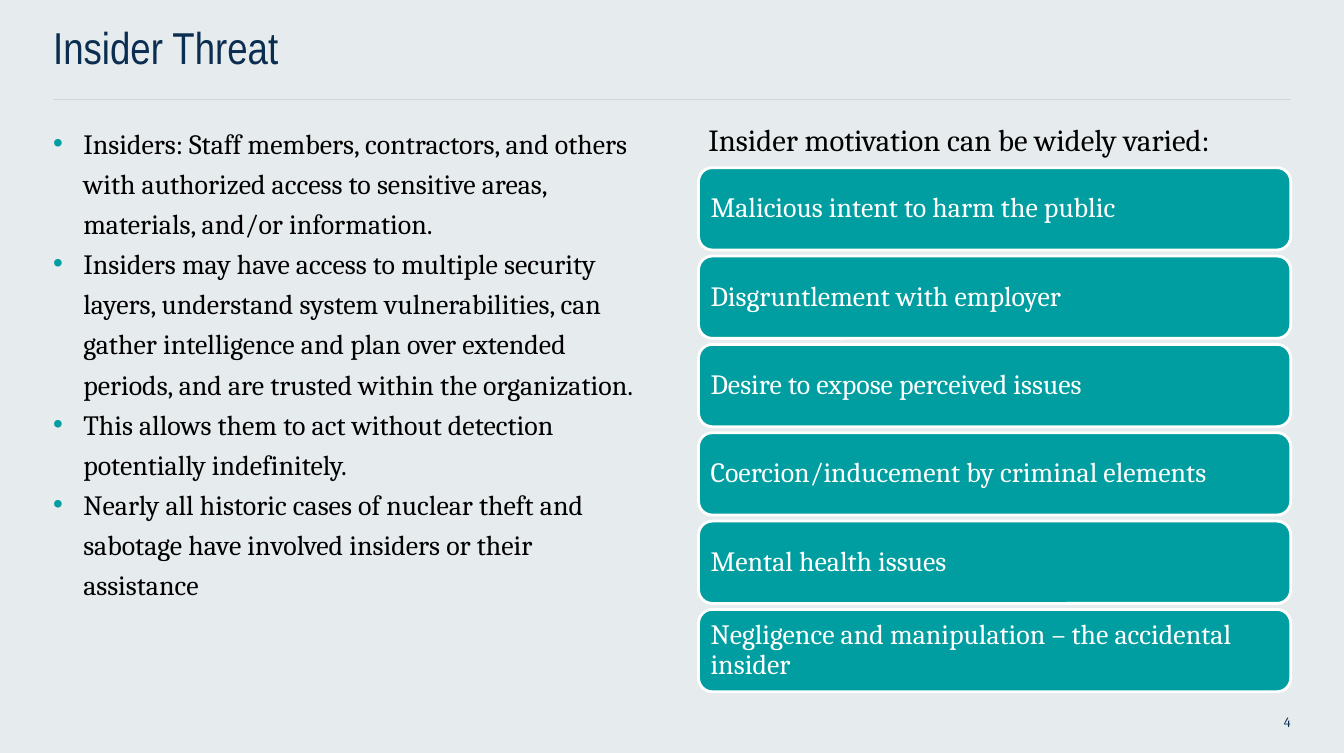
from dataclasses import dataclass

from lxml.etree import SubElement
from pptx import Presentation
from pptx.dml.color import RGBColor
from pptx.enum.shapes import MSO_CONNECTOR as Connector, MSO_SHAPE as Shape
from pptx.enum.text import MSO_ANCHOR as Anchor, PP_ALIGN as Align
from pptx.oxml.ns import qn
from pptx.util import Pt


@dataclass(frozen=True)
class Theme:
    background: RGBColor = RGBColor.from_string("E6EBED")
    rule: RGBColor = RGBColor.from_string("CDD7DC")
    navy: RGBColor = RGBColor.from_string("0A2D50")
    teal: RGBColor = RGBColor.from_string("009EA0")
    black: RGBColor = RGBColor.from_string("000000")
    white: RGBColor = RGBColor.from_string("FFFFFF")
    heading_font: str = "Arial Narrow"
    body_font: str = "Cambria"
    title_size: int = 32
    lead_size: int = 22
    body_size: int = 20
    number_size: int = 10


theme = Theme()
PX = 9144  # 100 px to the inch

LEFT, RIGHT = 53, 1286
COLUMN_WIDTH = 590
CARD_LEFT = RIGHT - COLUMN_WIDTH
CARD_TOP, CARD_HEIGHT, CARD_PITCH = 167, 82, 88
BULLET_INDENT = 30

insider_points = [
    "Insiders: Staff members, contractors, and others with authorized access to sensitive areas, materials, and/or information.",
    "Insiders may have access to multiple security layers, understand system vulnerabilities, can gather intelligence and plan over extended periods, and are trusted within the organization.",
    "This allows them to act without detection potentially indefinitely.",
    "Nearly all historic cases of nuclear theft and sabotage have involved insiders or their assistance",
]
motivations = [
    "Malicious intent to harm the public",
    "Disgruntlement with employer",
    "Desire to expose perceived issues",
    "Coercion/inducement by criminal elements",
    "Mental health issues",
    "Negligence and manipulation – the accidental insider",
]


def write_text(shape, lines, size, color, font=theme.body_font, align=Align.LEFT,
               anchor=Anchor.TOP, insets=(0, 0, 0, 0), line_spacing=1.0):
    """Fill a shape with one paragraph per line; insets run left, top, right, bottom."""
    frame = shape.text_frame
    frame.word_wrap = True
    frame.vertical_anchor = anchor
    frame.margin_left, frame.margin_top, frame.margin_right, frame.margin_bottom = (
        inset * PX for inset in insets)
    for index, line in enumerate(lines):
        paragraph = frame.add_paragraph() if index else frame.paragraphs[0]
        paragraph.alignment = align
        paragraph.line_spacing = line_spacing
        run = paragraph.add_run()
        run.text = line
        run.font.name = font
        run.font.size = Pt(size)
        run.font.color.rgb = color


def add_bullet(paragraph):
    properties = paragraph._p.get_or_add_pPr()
    properties.set("marL", str(BULLET_INDENT * PX))
    properties.set("indent", str(-BULLET_INDENT * PX))
    bullet_color = SubElement(properties, qn("a:buClr"))
    SubElement(bullet_color, qn("a:srgbClr"), val=str(theme.teal))
    SubElement(properties, qn("a:buFont"), typeface="Arial")
    SubElement(properties, qn("a:buChar"), char="•")


presentation = Presentation()
presentation.slide_width = 1339 * PX
presentation.slide_height = 750 * PX
slide = presentation.slides.add_slide(presentation.slide_layouts[6])
slide.background.fill.solid()
slide.background.fill.fore_color.rgb = theme.background
shapes = slide.shapes

# Title and rule
title = shapes.add_textbox(LEFT * PX, 20 * PX, (RIGHT - LEFT) * PX, 79 * PX)
write_text(title, ["Insider Threat"], theme.title_size, theme.navy, font=theme.heading_font)

title_rule = shapes.add_connector(Connector.STRAIGHT, LEFT * PX, 99 * PX, RIGHT * PX, 99 * PX)
title_rule.line.color.rgb = theme.rule
title_rule.line.width = Pt(1)
SubElement(title_rule._element.spPr, qn("a:effectLst"))

# Left column: who insiders are
body = shapes.add_textbox(LEFT * PX, 119 * PX, COLUMN_WIDTH * PX, 532 * PX)
write_text(body, insider_points, theme.body_size, theme.black, line_spacing=1.2)
for paragraph in body.text_frame.paragraphs:
    add_bullet(paragraph)

# Right column: motivations
lead = shapes.add_textbox(CARD_LEFT * PX, 115 * PX, COLUMN_WIDTH * PX, 47 * PX)
write_text(lead, ["Insider motivation can be widely varied:"], theme.lead_size, theme.black,
           insets=(10, 5, 10, 5))

for row, motivation in enumerate(motivations):
    card = shapes.add_shape(Shape.ROUNDED_RECTANGLE, CARD_LEFT * PX,
                            (CARD_TOP + row * CARD_PITCH) * PX,
                            COLUMN_WIDTH * PX, CARD_HEIGHT * PX)
    card.shadow.inherit = False
    card.fill.solid()
    card.fill.fore_color.rgb = theme.teal
    card.line.color.rgb = theme.white
    card.line.width = Pt(2)
    write_text(card, [motivation], theme.body_size, theme.white, anchor=Anchor.MIDDLE,
               insets=(8, 8, 8, 8), line_spacing=0.9)

# Slide number
slide_number = shapes.add_textbox(1181 * PX, 711 * PX, 105 * PX, 39 * PX)
write_text(slide_number, ["4"], theme.number_size, theme.navy, align=Align.RIGHT,
           insets=(10, 0, 0, 0))

presentation.save("out.pptx")
